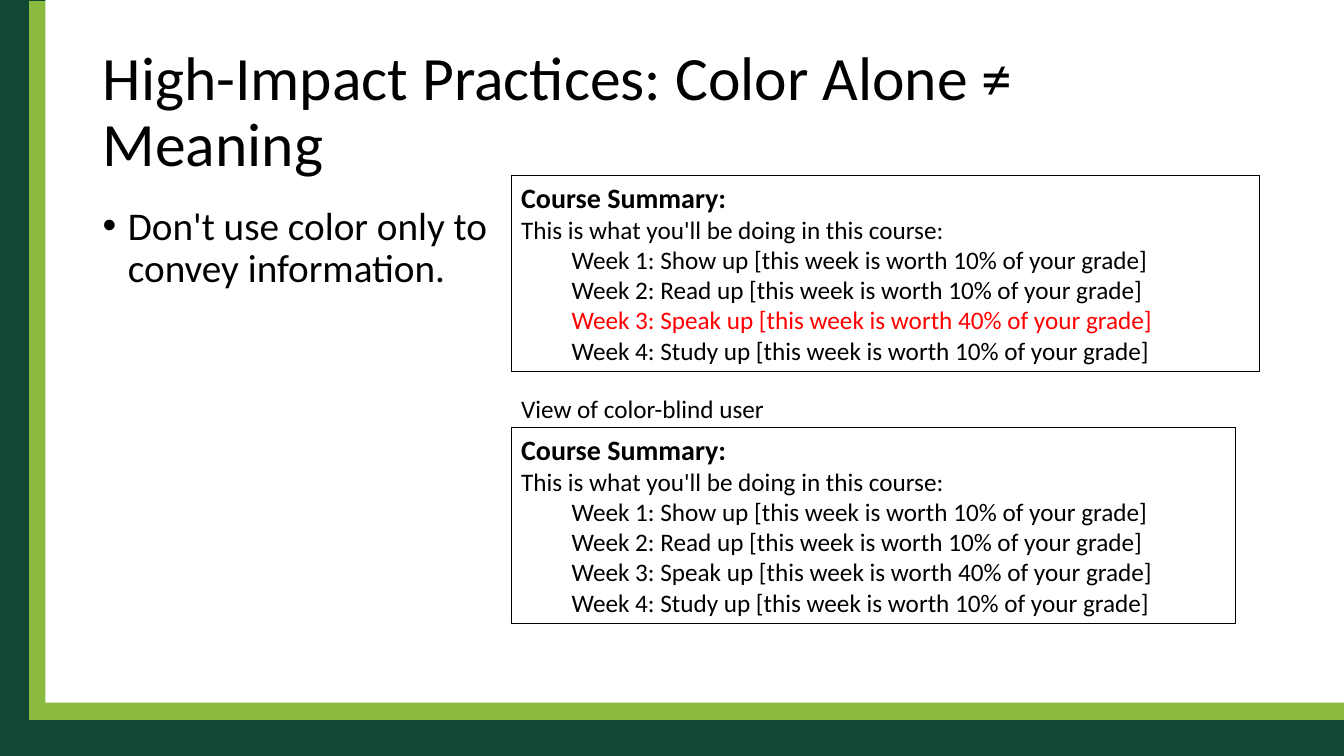
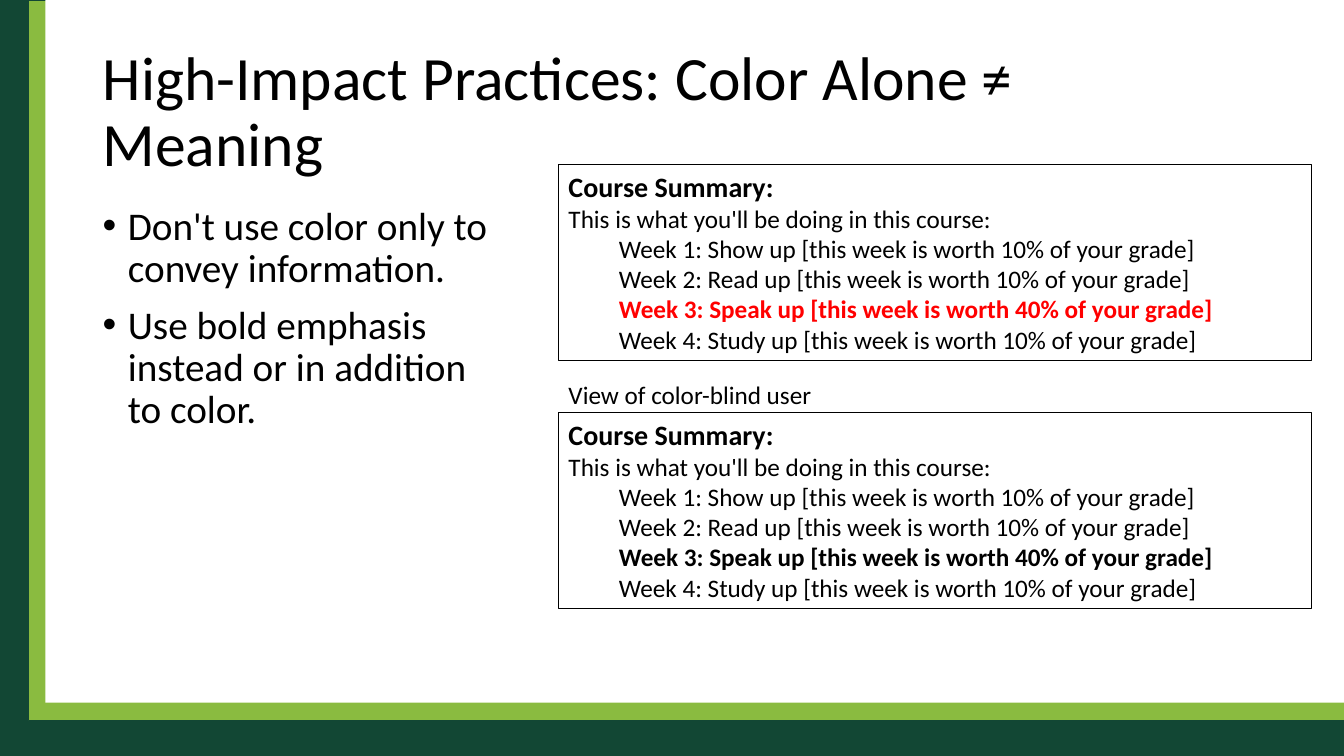
from lxml import etree
from pptx import Presentation
from pptx.dml.color import RGBColor
from pptx.enum import shapes, text
from pptx.oxml.ns import qn
from pptx.util import Inches, Pt

DARK, GREEN, WHITE, BLACK, RED = "124734", "8ABB40", "FFFFFF", "000000", "FF0000"
FONT = "Calibri"
TITLE = "High-Impact Practices: Color Alone ≠ Meaning"
LABEL = "View of color-blind user"
HEAD = "Course Summary:"
INTRO = "This is what you'll be doing in this course:"
WEEKS = [("Show up", 10), ("Read up", 10), ("Speak up", 40), ("Study up", 10)]
KEY = 40
TIPS = ["Don't use color only to convey information.",
        "Use bold emphasis instead or in addition to color."]
BANDS = [((0.28, 0, 13.06, 7.15), GREEN, DARK),
         ((0.45, 0, 12.88, 6.97), WHITE, None)]
SLIDES = [
    dict(tips=TIPS[:1], left=5.07, label=3.85, bold=False,
         boxes=[(1.74, 7.42, RED), (4.24, 7.18, BLACK)]),
    dict(tips=TIPS, left=5.54, label=3.71, bold=True,
         boxes=[(1.63, 7.47, RED), (4.09, 7.47, BLACK)]),
]


def color(code):
    return RGBColor.from_string(code)


def rect(slide, at, fill=None, line=None):
    box = slide.shapes.add_shape(shapes.MSO_SHAPE.RECTANGLE, *map(Inches, at))
    box.shadow.inherit = False
    if fill:
        box.fill.solid()
        box.fill.fore_color.rgb = color(fill)
    else:
        box.fill.background()
    if line:
        box.line.color.rgb = color(line)
        box.line.width = Pt(0.75)
    else:
        box.line.fill.background()
    return box


def area(slide, *at):
    return slide.shapes.add_textbox(*map(Inches, at))


def frame(box, anchor=text.MSO_ANCHOR.TOP):
    body = box.text_frame
    body.word_wrap = True
    body.vertical_anchor = anchor
    return body


def write(body, words, size=18, bold=False, ink=BLACK, indent=0,
          bullet=False, space=None, before=0):
    first = not body.paragraphs[0].runs
    para = body.paragraphs[0] if first else body.add_paragraph()
    props = para._p.get_or_add_pPr()
    if indent:
        props.set("marL", str(Inches(indent)))
    if bullet:
        props.set("indent", str(-Inches(indent)))
        etree.SubElement(props, qn("a:buFont")).set("typeface", "Arial")
        etree.SubElement(props, qn("a:buChar")).set("char", "•")
    para.alignment = text.PP_ALIGN.LEFT
    if space:
        para.line_spacing = space
    if before and not first:
        para.space_before = Pt(before)
    run = para.add_run()
    run.text = words
    font = run.font
    font.name, font.size, font.bold = FONT, Pt(size), bold
    font.color.rgb = color(ink)


def course(slide, left, top, width, ink, bold):
    body = frame(rect(slide, (left, top, width, 1.95), line=BLACK))
    write(body, HEAD, size=20, bold=True)
    write(body, INTRO)
    for week, (task, worth) in enumerate(WEEKS, 1):
        key = worth == KEY
        write(body, f"Week {week}: {task} [this week is worth {worth}% of your grade]",
              indent=0.5, bold=bold and key, ink=ink if key else BLACK)


def build(deck, tips, left, label, bold, boxes):
    slide = deck.slides.add_slide(deck.slide_layouts[6])
    for at, fill, line in BANDS:
        rect(slide, at, fill, line)
    title = area(slide, 0.92, 0.4, 11.5, 1.45)
    write(frame(title, text.MSO_ANCHOR.MIDDLE), TITLE, size=44, space=0.9)
    body = frame(area(slide, 0.92, 2, 4.15, 4.05))
    for tip in tips:
        write(body, tip, size=28, indent=0.25, bullet=True, space=0.9, before=10)
    for top, width, ink in boxes:
        course(slide, left, top, width, ink, bold)
    write(frame(area(slide, left, label, 3.46, 0.4)), LABEL)


def main():
    deck = Presentation()
    deck.slide_width, deck.slide_height = Inches(13.33), Inches(7.5)
    back = deck.slide_master.background.fill
    back.solid()
    back.fore_color.rgb = color(DARK)
    for item in SLIDES:
        build(deck, **item)
    deck.save("out.pptx")


if __name__ == "__main__":
    main()
